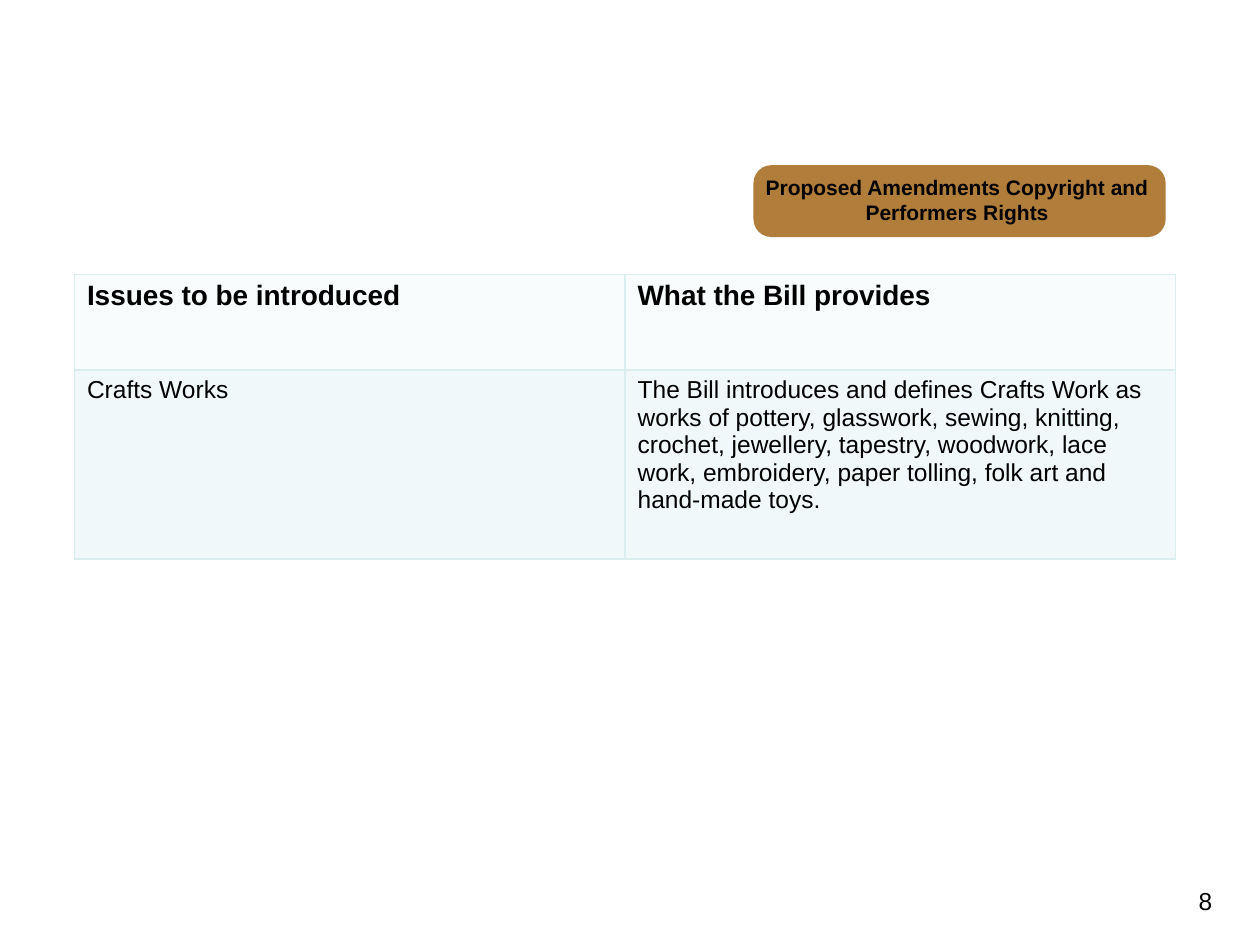
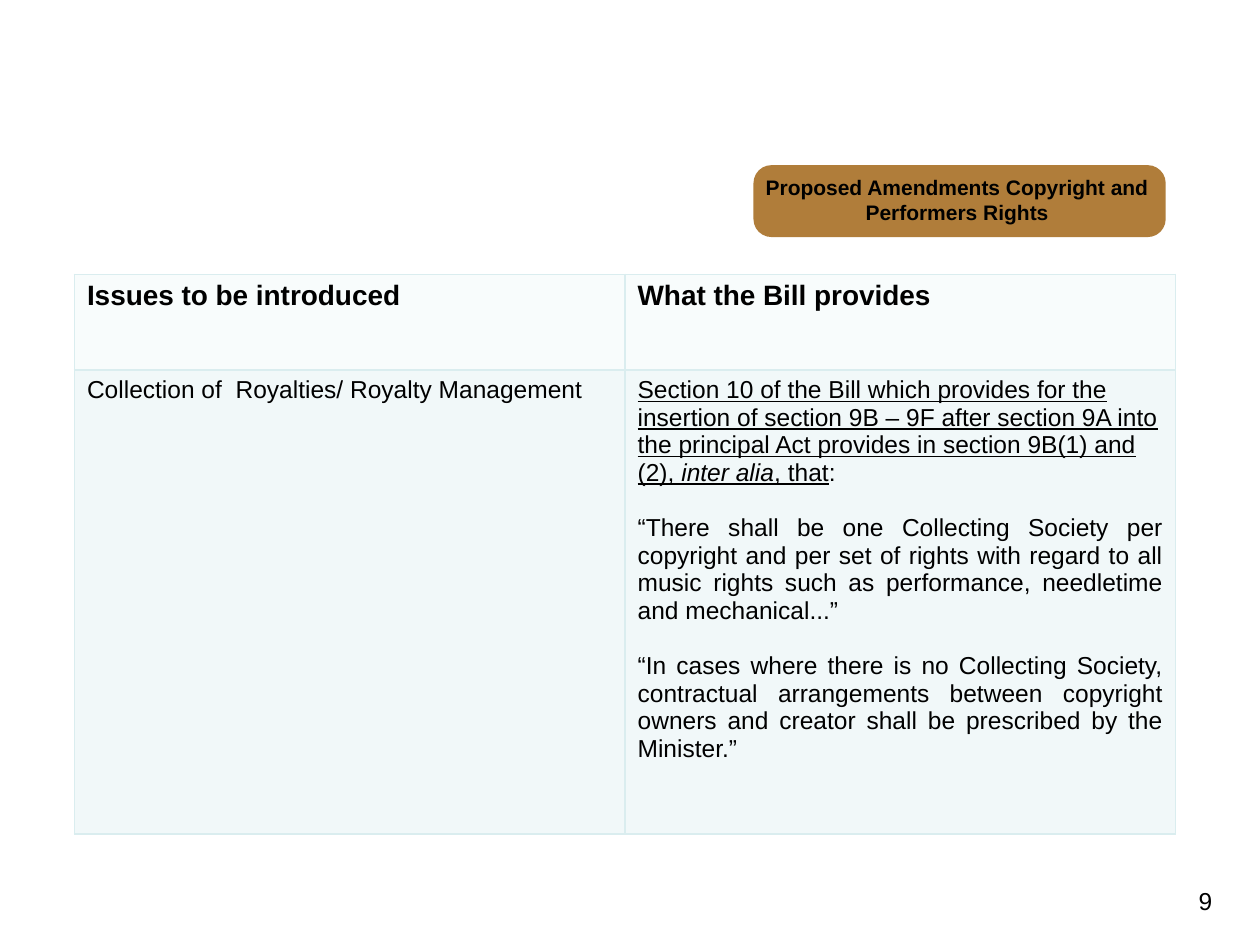
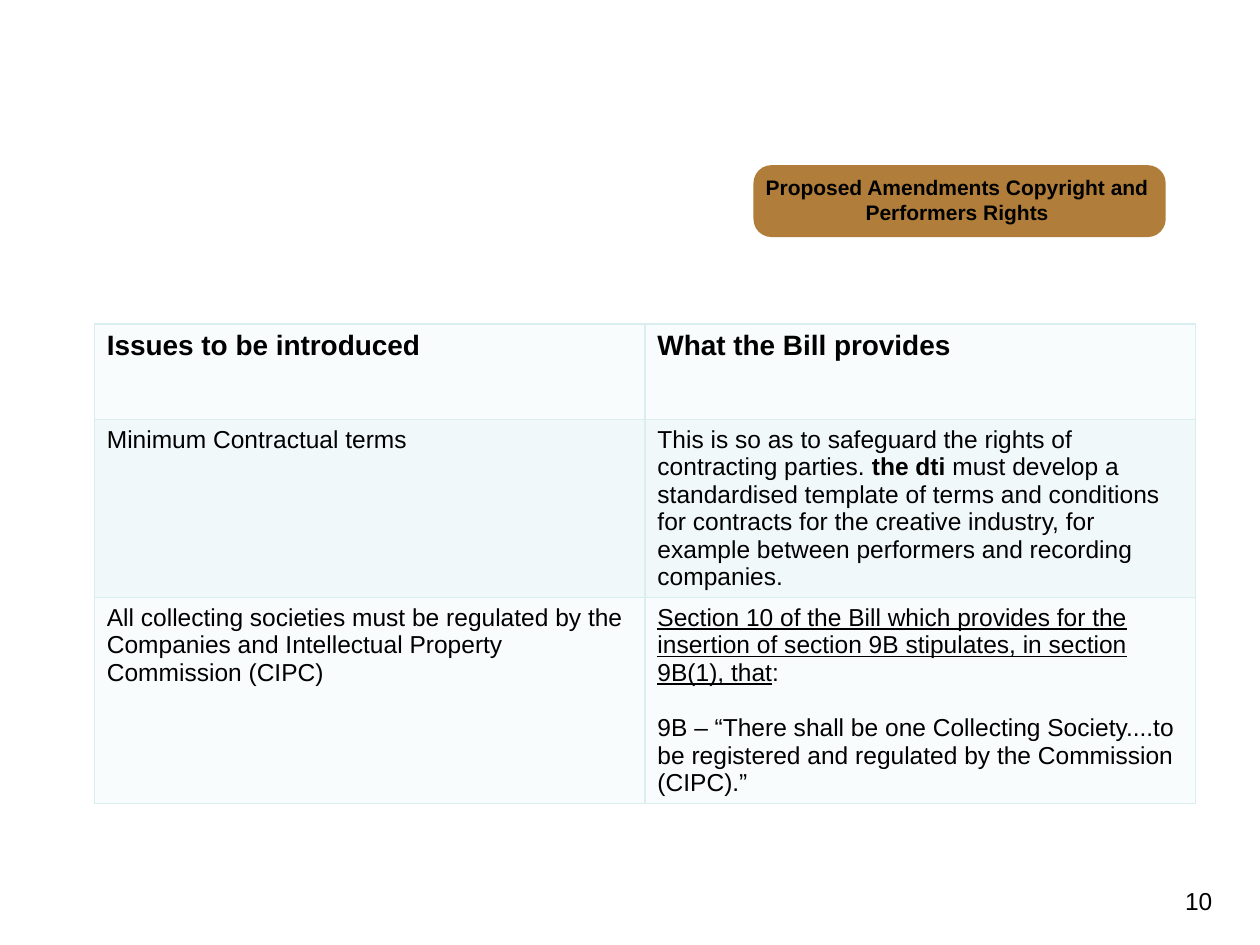
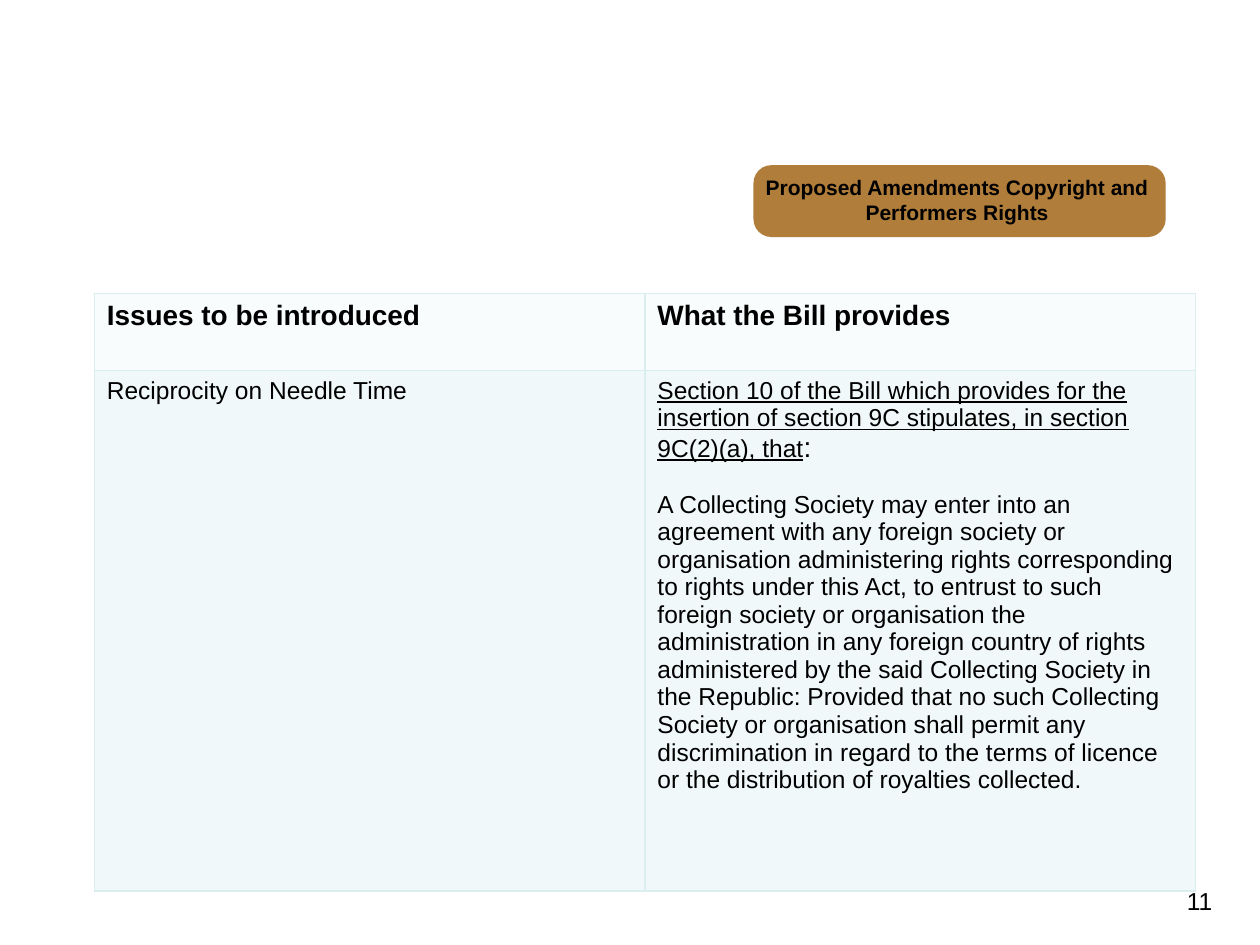
from dataclasses import dataclass, field

import pptx
import pptx.dml.color
import pptx.enum.shapes
import pptx.enum.text
import pptx.oxml
import pptx.oxml.ns
import pptx.util

Cm = pptx.util.Cm
Pt = pptx.util.Pt
Align = pptx.enum.text.PP_ALIGN


@dataclass(frozen=True)
class Theme:
    font: str = "Arial"
    text: str = "000000"
    band: str = "B07D3A"
    border: str = "DAEDEF"
    row_fills: tuple = ("F8FCFC", "F1F8F9")
    title_size: int = 12
    header_size: int = 16
    body_size: int = 14
    gap: int = 16


@dataclass
class Passage:
    """A paragraph of (text, style) runs; style letters: b, i, u and L for large."""
    runs: list = field(default_factory=list)
    align: object = Align.LEFT


def plain(text, align=Align.LEFT):
    return Passage([(text, "")], align)


def color(value):
    return pptx.dml.color.RGBColor.from_string(value)


TITLE = "Proposed Amendments Copyright and Performers Rights"
HEADERS = ("Issues to be introduced", "What the Bill provides")
FIRST_NUMBER = 8
COLUMN_WIDTH = 11.1

# Each table: left, top, row heights (cm), body rows of (issue, provision)
TABLES = [
    (1.5, 5.53, (1.93, 3.81), [
        ("Crafts Works", [Passage([
            ("The Bill introduces and defines Crafts Work as ", ""),
            (" ", "u"),
            ("works of pottery, glasswork, sewing, knitting, crochet, jewellery, "
             "tapestry, woodwork, lace work, embroidery, paper tolling, folk art "
             "and hand-made toys.", ""),
        ])]),
    ]),
    (1.5, 5.53, (1.93, 9.35), [
        ("Collection of  Royalties/ Royalty Management", [
            Passage([
                ("Section 10 of the Bill which provides for the insertion of section "
                 "9B – 9F after section 9A into the principal Act provides in section "
                 "9B(1) and (2), ", "u"),
                ("inter alia", "ui"),
                (", that", "u"),
                (":", ""),
            ]),
            plain("“There shall be one Collecting Society per copyright and per set "
                  "of rights with regard to all music rights such as performance, "
                  "needletime and mechanical...”", Align.JUSTIFY),
            plain("“In cases where there is no Collecting Society, contractual "
                  "arrangements between copyright owners and creator shall be "
                  "prescribed by the Minister.”", Align.JUSTIFY),
        ]),
    ]),
    (1.9, 6.53, (1.93, 3.58, 4.14), [
        ("Minimum Contractual terms", [Passage([
            ("This is so as to safeguard the rights of contracting parties. ", ""),
            ("the dti", "b"),
            (" must develop a standardised template of terms and conditions for "
             "contracts for the creative industry, for example between performers "
             "and recording companies.", ""),
        ])]),
        ("All collecting societies must be regulated by the Companies and "
         "Intellectual Property Commission (CIPC)", [
             Passage([
                 ("Section 10 of the Bill which provides for the insertion of section "
                  "9B stipulates, in section 9B(1), that", "u"),
                 (":", ""),
             ]),
             plain("9B – “There shall be one Collecting Society....to be registered "
                   "and regulated by the Commission (CIPC).”"),
         ]),
    ]),
    (1.9, 5.92, (1.55, 10.49), [
        ("Reciprocity on Needle Time", [
            Passage([
                ("Section 10 of the Bill which provides for the insertion of section "
                 "9C stipulates, in section 9C(2)(a), that", "u"),
                (":", "L"),
            ]),
            plain("A Collecting Society may enter into an agreement with any foreign "
                  "society or organisation administering rights corresponding to "
                  "rights under this Act, to entrust to such foreign society or "
                  "organisation the administration in any foreign country of rights "
                  "administered by the said Collecting Society in the Republic: "
                  "Provided that no such Collecting Society or organisation shall "
                  "permit any discrimination in regard to the terms of licence or "
                  "the distribution of royalties collected."),
        ]),
    ]),
]


class Deck:
    def __init__(self, theme):
        self.theme = theme
        self.slide = None
        self.presentation = pptx.Presentation()
        self.presentation.slide_width = Cm(25.4)
        self.presentation.slide_height = Cm(19.05)
        self.layout = self.presentation.slide_layouts[5]
        self.place_layout_title()

    def place_layout_title(self):
        title = self.layout.placeholders[0]
        title.left, title.top = Cm(15.09), Cm(3.33)
        title.width, title.height = Cm(8.41), Cm(1.4)
        title.text_frame.vertical_anchor = pptx.enum.text.MSO_ANCHOR.MIDDLE
        title.text_frame.auto_size = pptx.enum.text.MSO_AUTO_SIZE.NONE

    def add_layout_band(self):
        """Draw the title band on the current slide, then move it to the layout."""
        band = self.slide.shapes.add_shape(
            pptx.enum.shapes.MSO_SHAPE.ROUNDED_RECTANGLE,
            Cm(15.19), Cm(3.33), Cm(8.31), Cm(1.45))
        band.adjustments[0] = 0.25
        band.shadow.inherit = False
        band.fill.solid()
        band.fill.fore_color.rgb = color(self.theme.band)
        band.line.fill.background()
        band.element.nvSpPr.cNvPr.set("id", "20")
        self.layout.shapes.element.insert(2, band.element)

    def format_font(self, font, size, bold=False):
        font.name = self.theme.font
        font.size = Pt(size)
        font.bold = bold
        font.color.rgb = color(self.theme.text)

    def add_slide(self, title):
        self.slide = self.presentation.slides.add_slide(self.layout)
        shape = self.slide.shapes.title
        shape.text_frame.text = title
        paragraph = shape.text_frame.paragraphs[0]
        paragraph.alignment = Align.CENTER
        self.format_font(paragraph.runs[0].font, self.theme.title_size, bold=True)

    def add_number(self, number):
        box = self.slide.shapes.add_textbox(Cm(18.77), Cm(17.73), Cm(5.92), Cm(0.94))
        box.text_frame.word_wrap = True
        box.text_frame.text = str(number)
        paragraph = box.text_frame.paragraphs[0]
        paragraph.alignment = Align.RIGHT
        self.format_font(paragraph.runs[0].font, self.theme.body_size)

    def fill_cell(self, cell, passages, fill):
        frame = cell.text_frame
        for index, passage in enumerate(passages):
            paragraph = frame.add_paragraph() if index else frame.paragraphs[0]
            paragraph.alignment = passage.align
            paragraph.space_before = Pt(self.theme.gap if index else 0)
            for text, style in passage.runs:
                run = paragraph.add_run()
                run.text = text
                size = self.theme.header_size if "L" in style else self.theme.body_size
                self.format_font(run.font, size, "b" in style)
                run.font.italic = "i" in style
                run.font.underline = "u" in style
        cell.fill.solid()
        cell.fill.fore_color.rgb = color(fill)
        self.add_borders(cell)

    def add_borders(self, cell):
        properties = cell._tc.get_or_add_tcPr()
        for index, side in enumerate(("lnL", "lnR", "lnT", "lnB")):
            properties.insert(index, pptx.oxml.parse_xml(
                f'<a:{side} {pptx.oxml.ns.nsdecls("a")} w="{Pt(1)}"><a:solidFill>'
                f'<a:srgbClr val="{self.theme.border}"/></a:solidFill></a:{side}>'))

    def add_table(self, left, top, heights, body):
        headers = [[Passage([(text, "bL")])] for text in HEADERS]
        rows = [headers] + [([plain(issue)], provision) for issue, provision in body]
        table = self.slide.shapes.add_table(
            len(rows), len(HEADERS), Cm(left), Cm(top),
            Cm(COLUMN_WIDTH * len(HEADERS)), Cm(sum(heights))).table
        table.first_row = table.horz_banding = False
        for column in table.columns:
            column.width = Cm(COLUMN_WIDTH)
        for row_index, (height, cells) in enumerate(zip(heights, rows)):
            table.rows[row_index].height = Cm(height)
            fill = self.theme.row_fills[row_index % 2]
            for column_index, passages in enumerate(cells):
                self.fill_cell(table.cell(row_index, column_index), passages, fill)


def main():
    deck = Deck(Theme())
    for number, table in enumerate(TABLES, start=FIRST_NUMBER):
        deck.add_slide(TITLE)
        if number == FIRST_NUMBER:
            deck.add_layout_band()
        deck.add_table(*table)
        deck.add_number(number)
    deck.presentation.save("out.pptx")


if __name__ == "__main__":
    main()
